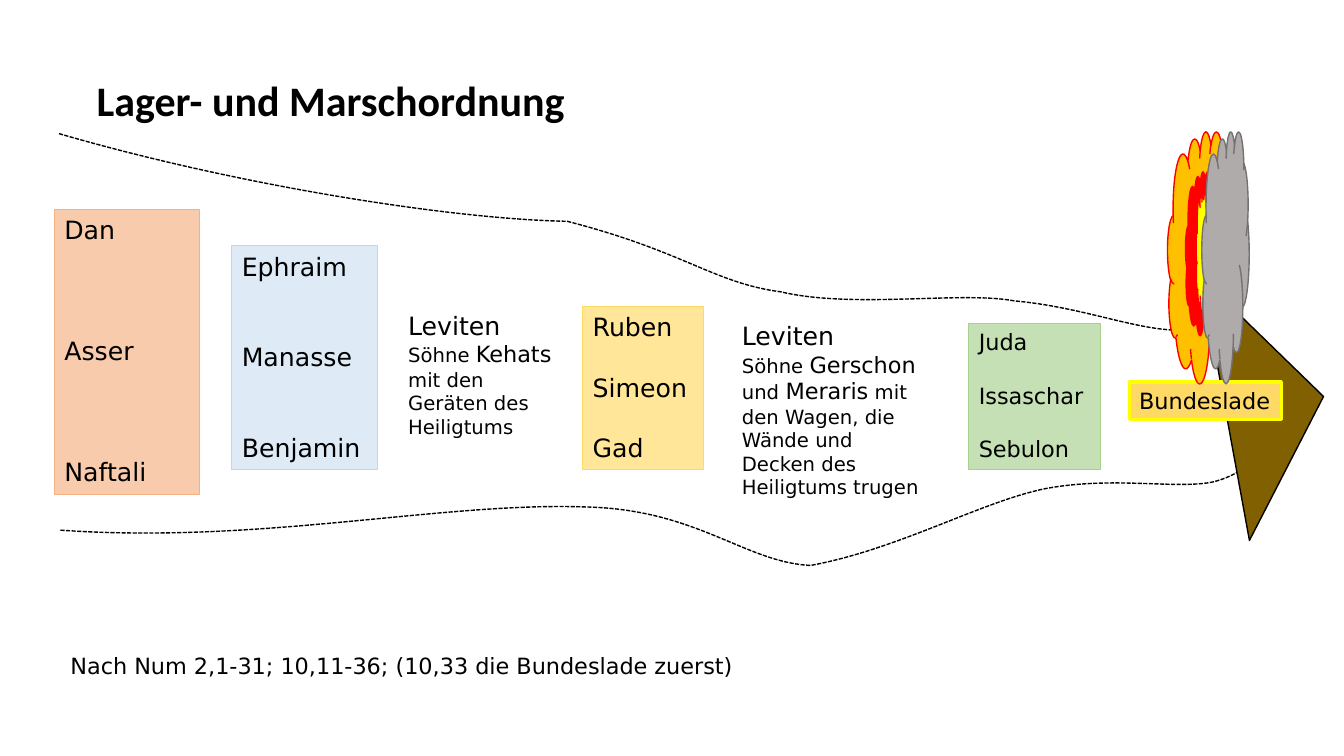
import math
import pptx
import pptx.util
import pptx.dml.color
import pptx.enum.dml
import pptx.enum.shapes
import pptx.enum.text
import pptx.oxml
import pptx.oxml.ns

COLUMNS, ROWS = 13.33, 7.5
CELL = pptx.util.Inches(1)
SHAPES = pptx.enum.shapes.MSO_SHAPE
BODY_FONT, TITLE_FONT = "DejaVu Sans", "Calibri"

COLORS = {
    "ink": "000000",
    "arrow": "806000",
    "gold": "FFD966",
    "yellow": "FFFF00",
    "green": "C5E0B4",
    "green edge": "A9D18E",
    "sand": "FFE699",
    "blue": "DEEBF7",
    "blue edge": "BDD7EE",
    "peach": "F8CBAD",
    "peach edge": "F4B183",
    "flame": "FFC000",
    "red": "FF0000",
    "smoke": "AFABAB",
    "smoke edge": "767171",
}

UPPER_ROUTE = [
    (0.58, 1.33), (2.37, 1.85), (4.49, 2.18), (5.62, 2.2),
    (6.79, 2.5), (7.07, 2.81), (7.74, 2.9),
    (8.46, 3.07), (9.54, 2.89), (10.06, 2.99),
    (10.73, 3.05), (11.26, 3.28), (11.69, 3.28),
    (12.06, 3.3), (12.14, 3.23), (12.25, 3.19),
    (12.34, 3.18), (12.3, 3.18), (12.24, 3.19),
]
LOWER_ROUTE = [
    (0.6, 5.26), (2.59, 5.4), (4.37, 4.98), (5.8, 5.03),
    (6.91, 5.05), (7.39, 5.58), (8.04, 5.61),
    (8.91, 5.45), (9.73, 4.98), (10.36, 4.85),
    (11.04, 4.72), (11.68, 4.86), (12.04, 4.78),
    (12.41, 4.68), (12.52, 4.46), (12.58, 4.38),
    (12.67, 4.31), (12.62, 4.34), (12.57, 4.38),
]

CAMPS = [
    ((9.61, 3.21, 1.31, 1.45), ["Juda", "Issaschar", "Sebulon"], 16, 18.8, "green", "green edge"),
    ((5.78, 3.04, 1.2, 1.62), ["Ruben", "Simeon", "Gad"], 18, 21.6, "sand", "gold"),
    ((2.3, 2.44, 1.44, 2.22), ["Ephraim", "Manasse", "Benjamin"], 18, 43.2, "blue", "blue edge"),
    ((0.54, 2.08, 1.44, 2.83), ["Dan", "Asser", "Naftali"], 18, 64.8, "peach", "peach edge"),
]

LEVITES = [
    ((7.26, 3.13, 2.06, 1.88), [
        ("Söhne ", 14), ("Gerschon", 16), (" und ", 14), ("Meraris", 16),
        (" mit den Wagen, die Wände und Decken des Heiligtums trugen", 14),
    ]),
    ((3.95, 3.03, 1.74, 1.38), [
        ("Söhne ", 14), ("Kehats ", 16), ("mit den Geräten des Heiligtums", 14),
    ]),
]

FIRE_CLOUDS = [
    ((0, 0, 0.77, 1), "flame", "red"),
    ((0.22, 0.16, 0.35, 0.65), "red", "red"),
    ((0.35, 0.23, 0.14, 0.49), "yellow", "red"),
    ((0.42, 0, 0.58, 1), "smoke", "smoke edge"),
]


def rgb(name):
    return pptx.dml.color.RGBColor.from_string(COLORS[name])


def lengths(box):
    return [round(value * CELL) for value in box]


def set_line(shape, color, width):
    shape.shadow.inherit = False
    shape.line.color.rgb = rgb(color)
    shape.line.width = pptx.util.Pt(width)


def add_filled(page, kind, box, fill, edge, width):
    shape = page.shapes.add_shape(kind, *lengths(box))
    shape.fill.solid()
    shape.fill.fore_color.rgb = rgb(fill)
    set_line(shape, edge, width)
    return shape


def write(shape, paragraphs, size, gap=0, font=BODY_FONT, bold=False):
    frame = shape.text_frame
    frame.word_wrap = True
    frame.vertical_anchor = pptx.enum.text.MSO_ANCHOR.TOP
    for index, spans in enumerate(paragraphs):
        para = frame.add_paragraph() if index else frame.paragraphs[0]
        para.alignment = pptx.enum.text.PP_ALIGN.LEFT
        if index and gap:
            para.space_before = pptx.util.Pt(gap)
        para.font.name = font
        para.font.size = pptx.util.Pt(size)
        para.font.bold = bold
        para.font.color.rgb = rgb("ink")
        if isinstance(spans, str):
            para.add_run().text = spans
            continue
        for text, span_size in spans:
            span = para.add_run()
            span.text = text
            span.font.size = pptx.util.Pt(span_size)
    return frame


def draw_text(page, box, paragraphs, size, **style):
    return write(page.shapes.add_textbox(*lengths(box)), paragraphs, size, **style)


def turn(point, pivot, degrees):
    cos, sin = math.cos(math.radians(degrees)), math.sin(math.radians(degrees))
    x, y = point[0] - pivot[0], point[1] - pivot[1]
    return pivot[0] + x * cos - y * sin, pivot[1] + x * sin + y * cos


def bend_segments(route):
    name = pptx.oxml.ns.qn
    segments = list(route._element.iter(name("a:lnTo")))
    for start in range(0, len(segments), 3):
        curve = pptx.oxml.parse_xml(
            "<a:cubicBezTo %s/>" % pptx.oxml.ns.nsdecls("a"))
        segments[start].addprevious(curve)
        for segment in segments[start:start + 3]:
            curve.append(segment.find(name("a:pt")))
            segment.getparent().remove(segment)


def draw_route(page, box, controls, rotation=0):
    left, top, width, height = box
    pivot = (left + width / 2, top + height / 2)
    points = [lengths(turn(point, pivot, -rotation)) for point in controls]
    builder = page.shapes.build_freeform(*points[0])
    builder.add_line_segments(points[1:], close=False)
    route = builder.convert_to_shape()
    bend_segments(route)
    route.rotation = rotation
    route.fill.background()
    set_line(route, "ink", 1)
    route.line.dash_style = pptx.enum.dml.MSO_LINE.SQUARE_DOT


def draw_ark(page, box):
    left, top, width, height = box
    arrow = add_filled(page, SHAPES.ISOSCELES_TRIANGLE,
                       (left + 0.11, top - 0.31, 2.65, 0.98), "arrow", "ink", 1)
    arrow.adjustments[0] = 0.52
    arrow.rotation = 79.6
    label = add_filled(page, SHAPES.RECTANGLE, box, "gold", "yellow", 2.25)
    write(label, ["Bundeslade"], 16)


def draw_camp(page, box, tribes, size, gap, fill, edge):
    camp = add_filled(page, SHAPES.RECTANGLE, box, fill, edge, 0.75)
    write(camp, tribes, size, gap)


def draw_fire_column(page, box):
    left, top, width, height = box
    for (x, y, across, down), fill, edge in FIRE_CLOUDS:
        cloud_box = (left + x * width, top + y * height, across * width, down * height)
        add_filled(page, SHAPES.CLOUD, cloud_box, fill, edge, 1)


def draw_title(page, box):
    frame = draw_text(page, box, ["Lager- und Marschordnung"], 30, font=TITLE_FONT, bold=True)
    frame.paragraphs[0].line_spacing = 1.07


def main():
    deck = pptx.Presentation()
    deck.slide_width, deck.slide_height = lengths((COLUMNS, ROWS))
    page = deck.slides.add_slide(deck.slide_layouts[6])
    draw_route(page, (0.6, 4.34, 12.03, 1.27), LOWER_ROUTE)
    draw_route(page, (0.49, 2.03, 11.86, 0.6), UPPER_ROUTE, 11.1)
    draw_ark(page, (11.2, 3.79, 1.51, 0.37))
    for camp in CAMPS:
        draw_camp(page, *camp)
    for box, duties in LEVITES:
        draw_text(page, box, ["Leviten", duties], 18)
    draw_fire_column(page, (11.58, 1.3, 0.81, 2.5))
    draw_text(page, (0.6, 6.42, 7.3, 0.37),
              ["Nach Num 2,1-31; 10,11-36; (10,33 die Bundeslade zuerst)"], 16)
    draw_title(page, (0.86, 0.66, 5.95, 0.62))
    deck.save("out.pptx")


if __name__ == "__main__":
    main()
